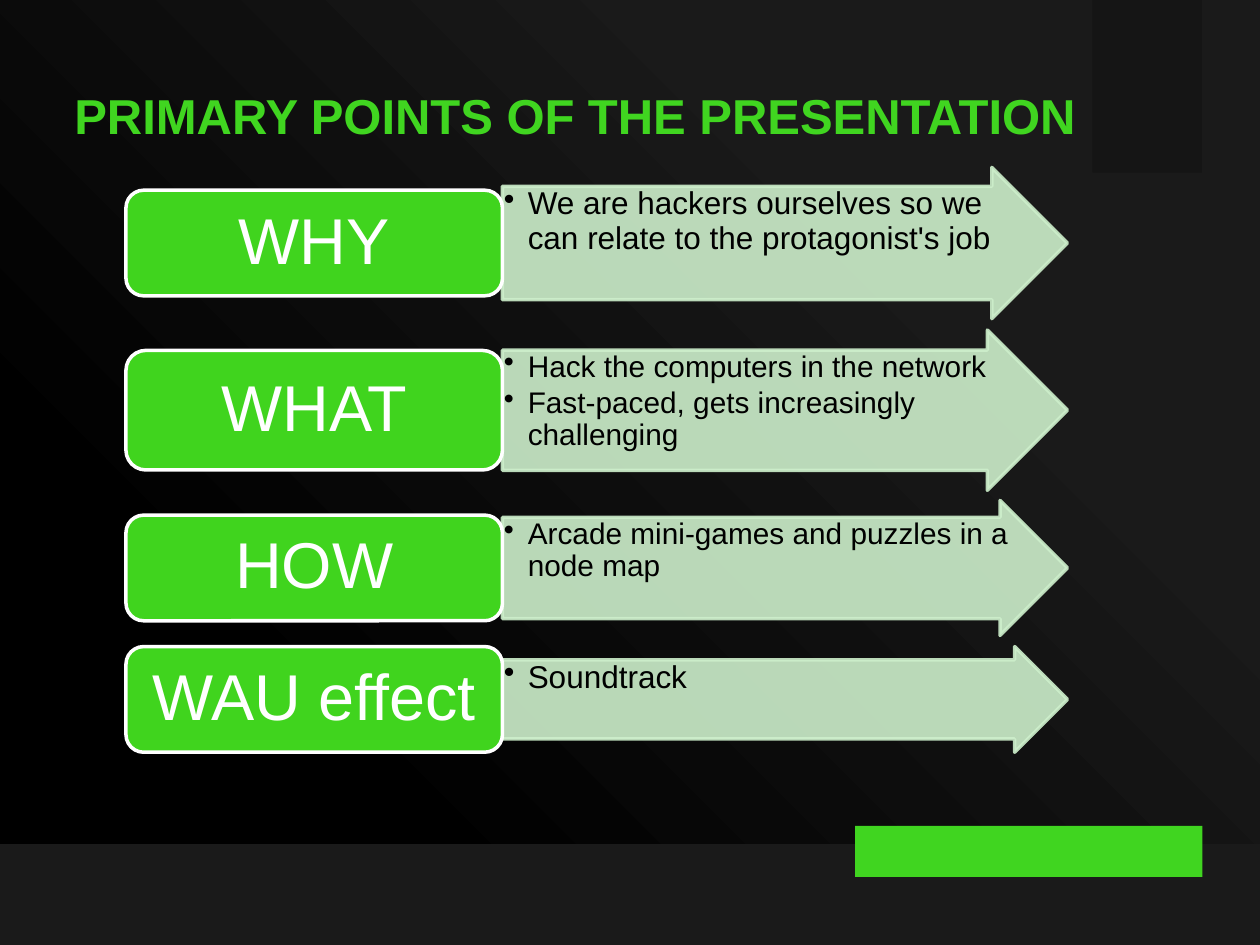
from lxml import etree
from pptx import Presentation
from pptx.dml.color import RGBColor
from pptx.enum.shapes import MSO_SHAPE
from pptx.enum.text import MSO_ANCHOR, PP_ALIGN
from pptx.oxml.ns import qn
from pptx.util import Cm, Pt


def draw(kind, left, top, width, height, color, line=None, alpha=None):
    """Add a filled shape; alpha is the opacity of fill and line in percent."""
    shape = slide.shapes.add_shape(kind, Cm(left), Cm(top), Cm(width), Cm(height))
    shape.shadow.inherit = False
    shape.fill.solid()
    shape.fill.fore_color.rgb = RGBColor.from_string(color)
    if line:
        shape.line.width = Pt(2)
        shape.line.color.rgb = RGBColor.from_string(line)
    else:
        shape.line.fill.background()
    if alpha:
        for tint in shape.element.spPr.iter(qn("a:srgbClr")):
            etree.SubElement(tint, qn("a:alpha"), val=str(alpha * 1000))
    return shape


def write(shape, lines, size, color, bold=False, align=PP_ALIGN.LEFT,
          anchor=MSO_ANCHOR.MIDDLE, inset=(0.25, 0.25), spacing=None, bullet=False):
    """Fill a shape with paragraphs; inset is (sides, top and bottom) in cm."""
    frame = shape.text_frame
    frame.word_wrap = True
    frame.vertical_anchor = anchor
    frame.margin_left = frame.margin_right = Cm(inset[0])
    frame.margin_top = frame.margin_bottom = Cm(inset[1])
    for i, text in enumerate(lines):
        para = frame.paragraphs[0] if i == 0 else frame.add_paragraph()
        para.alignment = align
        para.line_spacing = spacing
        if i > 0:
            para.space_before = Pt(2.5)
        if bullet:
            para.level = 1
            props = para._p.get_or_add_pPr()
            props.set("marL", str(Cm(0.48)))
            props.set("indent", str(-Cm(0.48)))
            etree.SubElement(props, qn("a:buChar"), char="•")
        run = para.add_run()
        run.text = text
        run.font.name = "Arial"
        run.font.size = Pt(size)
        run.font.bold = bold
        run.font.color.rgb = RGBColor.from_string(color)


deck = Presentation()
deck.slide_width, deck.slide_height = Cm(25.4), Cm(19.05)
slide = deck.slides.add_slide(deck.slide_layouts[6])

# Background: radial gradient centred on the top right corner
slide.background.fill.gradient()
grad = slide.element.find(".//" + qn("a:gradFill"))
for child in list(grad):
    grad.remove(child)
stops = etree.SubElement(grad, qn("a:gsLst"))
for pos, color in [(0, "1A1A1A"), (27, "1A1A1A"), (77, "000000"), (100, "000000")]:
    stop = etree.SubElement(stops, qn("a:gs"), pos=str(pos * 1000))
    etree.SubElement(stop, qn("a:srgbClr"), val=color)
path = etree.SubElement(grad, qn("a:path"), path="circle")
etree.SubElement(path, qn("a:fillToRect"), l="100000", b="100000")

# Decoration
draw(MSO_SHAPE.RECTANGLE, 0, 17.02, 25.4, 2.03, "1A1A1A")
draw(MSO_SHAPE.RECTANGLE, 17.24, 16.65, 7, 1.03, "40D520")
draw(MSO_SHAPE.RECTANGLE, 22.02, 0, 2.21, 3.48, "0C0C0C", alpha=33)

title = slide.shapes.add_textbox(Cm(1.25), Cm(0.74), Cm(21), Cm(3.17))
write(title, ["PRIMARY POINTS OF THE PRESENTATION"], 28, "40D520", bold=True)

# Rows: label, middle, arrow height, box height, text size, points
rows = [
    ("WHY", 4.9, 3.05, 2.13, 18,
     ["We are hackers ourselves so we can relate to the protagonist's job"]),
    ("WHAT", 8.27, 3.23, 2.41, 17,
     ["Hack the computers in the network",
      "Fast-paced, gets increasingly challenging"]),
    ("HOW", 11.45, 2.72, 2.13, 17,
     ["Arcade mini-games and puzzles in a node map"]),
    ("WAU effect", 14.1, 2.13, 2.13, 18, ["Soundtrack"]),
]
for label, mid, tall, high, size, points in rows:
    arrow = draw(MSO_SHAPE.RIGHT_ARROW, 10.13, mid - tall / 2, 11.39, tall,
                 "CDEFCB", line="CDEFCB", alpha=90)
    arrow.adjustments[0] = 0.75
    write(arrow, points, size, "000000", anchor=MSO_ANCHOR.TOP,
          inset=(0.03, 0.03), spacing=0.9, bullet=True)
    box = draw(MSO_SHAPE.ROUNDED_RECTANGLE, 2.54, mid - high / 2, 7.59, high,
               "40D41E", line="FFFFFF")
    write(box, [label], 37, "FFFFFF", align=PP_ALIGN.CENTER,
          inset=(0.38, 0.2), spacing=0.9)

deck.save("out.pptx")
